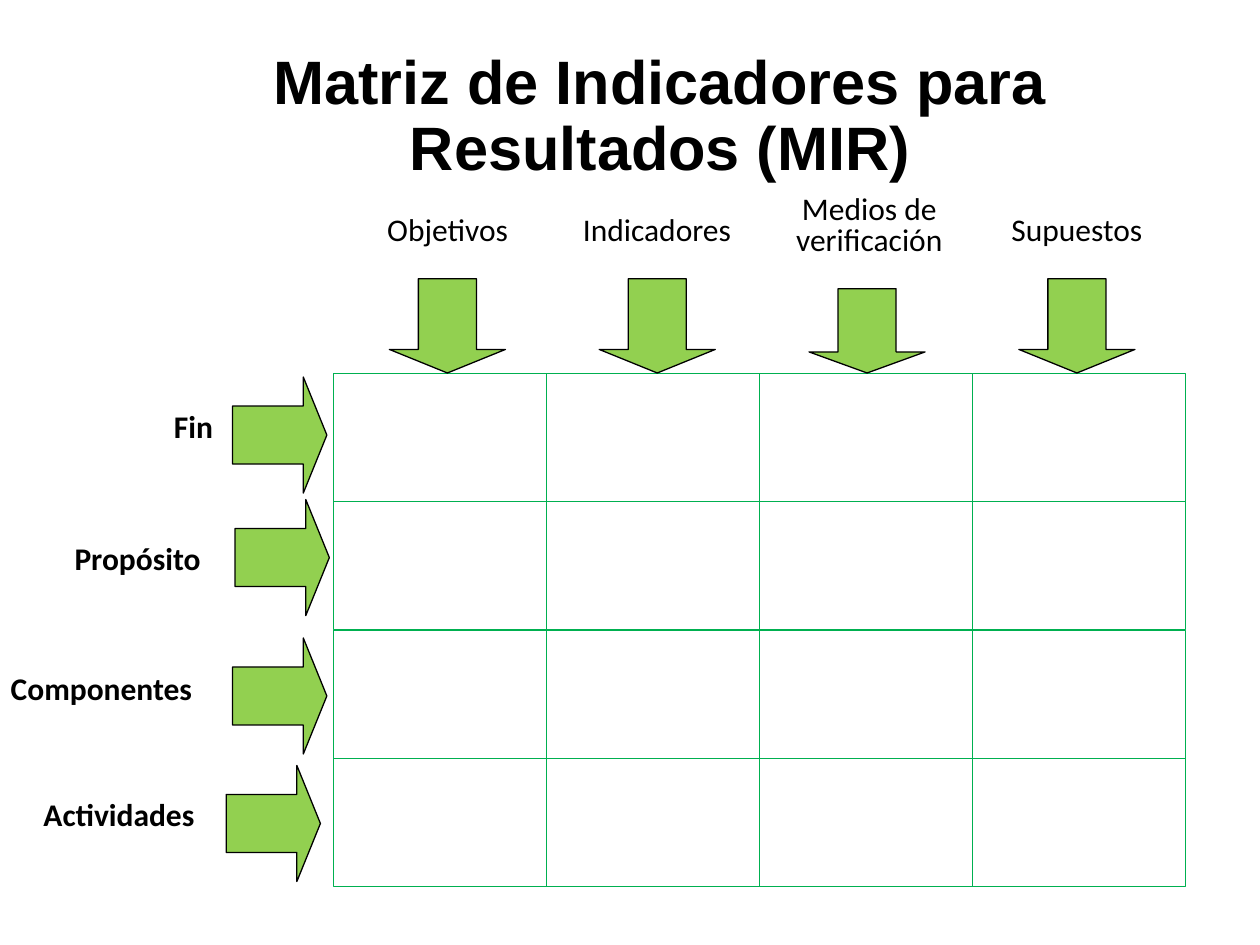
from pptx import Presentation
from pptx.dml.color import RGBColor
from pptx.enum.shapes import MSO_SHAPE as SHAPE
from pptx.enum.text import MSO_ANCHOR as ANCHOR, MSO_AUTO_SIZE as FIT, PP_ALIGN as ALIGN
from pptx.util import Cm, Pt


def rgb(hex_value):
    return RGBColor.from_string(hex_value)


def format_text(tf, spacing=None, before=None, **font):
    for p in tf.paragraphs:
        p.alignment = ALIGN.CENTER
        p.line_spacing = spacing
        p.space_before = before
        for r in p.runs:
            r.font.color.rgb = rgb("000000")
            for name, value in font.items():
                setattr(r.font, name, value)


prs = Presentation()
prs.slide_width, prs.slide_height = Cm(25.4), Cm(19.05)
s = prs.slides.add_slide(prs.slide_layouts[5])

# Title
title = s.shapes.title
box = {"left": Cm(2.31), "top": Cm(0.91), "width": Cm(22), "height": Cm(1.09)}
for name, value in box.items():
    setattr(title, name, value)
tf = title.text_frame
tf.text = "Matriz de Indicadores para Resultados (MIR)"
frame = {"word_wrap": True, "auto_size": FIT.NONE, "vertical_anchor": ANCHOR.TOP}
for name, value in frame.items():
    setattr(tf, name, value)
format_text(tf, 0.9, Pt(7.5), name="Arial", size=Pt(35), bold=True)

# Empty 4 x 4 matrix
matrix = s.shapes.add_group_shape()
cell_w, cell_h = 4.29, 2.59
for row in range(4):
    for col in range(4):
        sp = matrix.shapes.add_shape(
            SHAPE.RECTANGLE, Cm(6.73 + col * cell_w), Cm(7.52 + row * cell_h),
            Cm(cell_w), Cm(cell_h))
        sp.shadow.inherit = False
        sp.fill.background()
        sp.line.color.rgb = rgb("00B050")
        sp.line.width = Pt(0.5)

# Arrows: left, top, height, rotation
col_arrows = [(7.85 + 4.23 * i, 7.52 - h, h, 0) for i, h in enumerate((1.9, 1.9, 1.7, 1.9))]
row_arrows = [(4.47, 7.82, 1.9, 270), (4.52, 10.29, 1.9, 270),
              (4.47, 13.08, 1.9, 270), (4.34, 15.65, 1.9, 270)]
for left, top, height, rotation in col_arrows + row_arrows:
    sp = s.shapes.add_shape(SHAPE.DOWN_ARROW, Cm(left), Cm(top), Cm(2.34), Cm(height))
    sp.adjustments[0], sp.adjustments[1] = 0.5, 0.25
    sp.rotation = rotation
    sp.shadow.inherit = False
    sp.fill.solid()
    sp.fill.fore_color.rgb = rgb("92D050")
    sp.line.color.rgb = rgb("000000")
    sp.line.width = Pt(0.75)

# Labels: text, left, top, width, height, bold, line spacing
labels = [
    ("Objetivos", 7.54, 4.11, 2.97, 1.02, False, None),
    ("Indicadores", 11.48, 4.11, 3.53, 1.02, False, None),
    ("Medios de\nverificación", 15.77, 3.84, 3.51, 1.5, False, 0.8),
    ("Supuestos", 20.12, 4.11, 3.18, 1.02, False, None),
    ("Fin", 3.25, 8.08, 1.3, 1.02, True, None),
    ("Propósito", 1.24, 10.74, 3.07, 1.02, True, None),
    ("Componentes", -0.05, 13.36, 4.19, 1.02, True, None),
    ("Actividades", 0.61, 15.9, 3.58, 1.02, True, None),
]
for text, left, top, width, height, bold, spacing in labels:
    tf = s.shapes.add_textbox(Cm(left), Cm(top), Cm(width), Cm(height)).text_frame
    tf.text = text
    tf.word_wrap = False
    tf.auto_size = FIT.SHAPE_TO_FIT_TEXT
    format_text(tf, spacing, name="Calibri", size=Pt(18), bold=bold)

prs.save("out.pptx")
